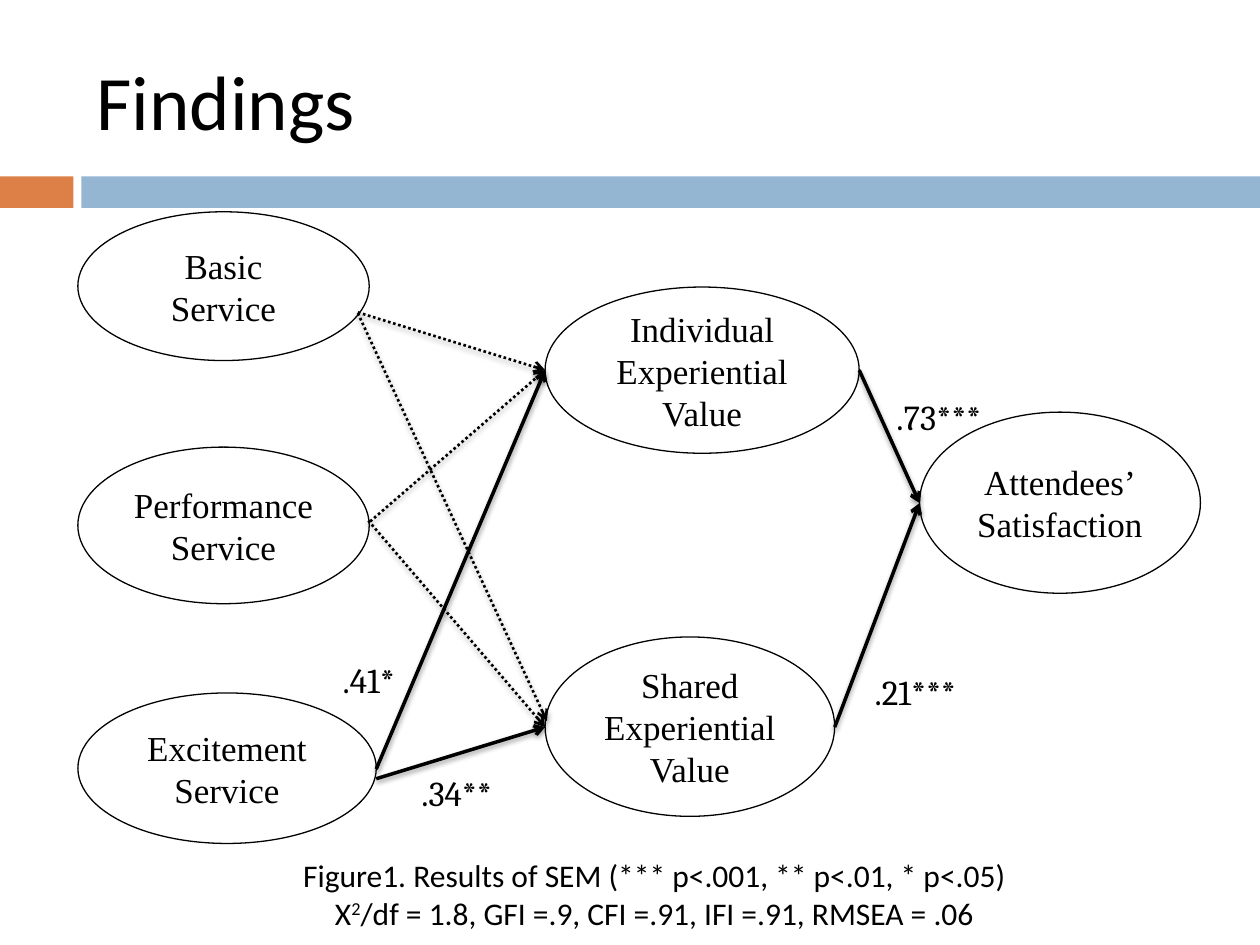
import pptx
import pptx.dml.color
import pptx.enum.dml
import pptx.enum.shapes
import pptx.enum.text
import pptx.oxml
import pptx.oxml.ns
import pptx.util

Pt = pptx.util.Pt
SHAPE = pptx.enum.shapes.MSO_SHAPE
ALIGN = pptx.enum.text.PP_ALIGN
ANCHOR = pptx.enum.text.MSO_ANCHOR
NAMESPACE = pptx.oxml.ns.nsdecls("a")


def paint(target, color):
    if hasattr(target, "solid"):
        target.solid()
        target = target.fore_color
    elif hasattr(target, "color"):
        target = target.color
    target.rgb = pptx.dml.color.RGBColor.from_string(color)


def write(box, text, font="Calibri", size=18, align=ALIGN.LEFT, anchor=ANCHOR.TOP, raised=None):
    frame = box.text_frame
    frame.word_wrap = True
    frame.vertical_anchor = anchor
    for index, line in enumerate(text.split("\n")):
        para = frame.add_paragraph() if index else frame.paragraphs[0]
        para.alignment = align
        for part in line.partition(raised) if raised and raised in line else [line]:
            span = para.add_run()
            span.text = part.strip("^")
            span.font.name = font
            span.font.size = Pt(size)
            paint(span.font.color, "000000")
            if part == raised:
                span.font._element.set("baseline", "30000")


deck = pptx.Presentation()
deck.slide_width, deck.slide_height = Pt(720), Pt(540)
page = deck.slides.add_slide(deck.slide_layouts[6])

for left, width, color in [(0, 42, "DD8047"), (46.5, 673.5, "94B6D2")]:
    band = page.shapes.add_shape(SHAPE.RECTANGLE, Pt(left), Pt(100.8), Pt(width), Pt(18))
    band.shadow.inherit = False
    paint(band.fill, color)
    band.line.fill.background()

title = page.shapes.add_textbox(Pt(48), Pt(18), Pt(642), Pt(78))
write(title, "Findings", size=44, anchor=ANCHOR.MIDDLE)

factors = [
    ("Basic Service", 44.5, 121, 166.5, 85),
    ("Excitement Service", 44.5, 396, 170.5, 86),
    ("Performance Service", 44.5, 255.5, 166.5, 89.5),
    ("Individual Experiential Value", 311.5, 164, 179.5, 95),
    ("Shared Experiential Value", 311.5, 364, 165.5, 102.5),
    ("Attendees’\nSatisfaction", 525.5, 235.5, 160.5, 103.5),
]
for text, left, top, width, height in factors:
    factor = page.shapes.add_shape(SHAPE.OVAL, Pt(left), Pt(top), Pt(width), Pt(height))
    factor.shadow.inherit = False
    paint(factor.fill, "FFFFFF")
    shade = factor.fill._xPr.find(".//" + pptx.oxml.ns.qn("a:srgbClr"))
    shade.append(pptx.oxml.parse_xml(f'<a:alpha {NAMESPACE} val="68000"/>'))
    paint(factor.line, "000000")
    factor.line.width = Pt(0.75)
    write(factor, text, font="Times New Roman", size=20, align=ALIGN.CENTER, anchor=ANCHOR.MIDDLE)

coefficients = [
    (".41*", 187, 371, 69),
    (".73***", 503.5, 221, 80.5),
    (".34**", 232, 435.5, 80),
    (".21***", 491, 378, 85),
]
for text, left, top, width in coefficients:
    label = page.shapes.add_shape(SHAPE.ROUNDED_RECTANGLE, Pt(left), Pt(top), Pt(width), Pt(36))
    label.shadow.inherit = False
    label.fill.background()
    label.line.fill.background()
    write(label, text, font="Cambria", size=20)

individual, shared, satisfaction = (311.5, 211.5), (311.5, 415.5), (525.5, 287.5)
effects = [
    ((215, 439.5), individual, True),
    ((210.5, 297.5), shared, False),
    ((215, 445), shared, True),
    ((491, 211.5), satisfaction, True),
    ((204.5, 178.5), individual, False),
    ((477, 415.5), satisfaction, True),
    ((204.5, 179), (312.5, 412), False),
    ((211.5, 298), individual, False),
]
for start, end, significant in effects:
    arrow = page.shapes.add_connector(
        pptx.enum.shapes.MSO_CONNECTOR.STRAIGHT, *map(Pt, start + end)
    )
    paint(arrow.line, "000000")
    arrow.line.width = Pt(2 if significant else 1.5)
    if not significant:
        arrow.line.dash_style = pptx.enum.dml.MSO_LINE.ROUND_DOT
    arrow.line._get_or_add_ln().append(
        pptx.oxml.parse_xml(f'<a:tailEnd {NAMESPACE} type="arrow"/>')
    )
    arrow._element.spPr.append(pptx.oxml.parse_xml(
        f'<a:effectLst {NAMESPACE}><a:outerShdw blurRad="{Pt(3.1)}" dist="{Pt(1.6)}" '
        'dir="5400000" rotWithShape="0"><a:srgbClr val="000000"><a:alpha val="38000"/>'
        '</a:srgbClr></a:outerShdw></a:effectLst>'
    ))

caption = page.shapes.add_textbox(Pt(158.5), Pt(485.5), Pt(431), Pt(72.5))
write(
    caption,
    "Figure1. Results of SEM (*** p<.001, ** p<.01, * p<.05)\n"
    "X^2^/df = 1.8, GFI =.9, CFI =.91, IFI =.91, RMSEA = .06",
    align=ALIGN.CENTER,
    raised="^2^",
)

deck.save("out.pptx")
